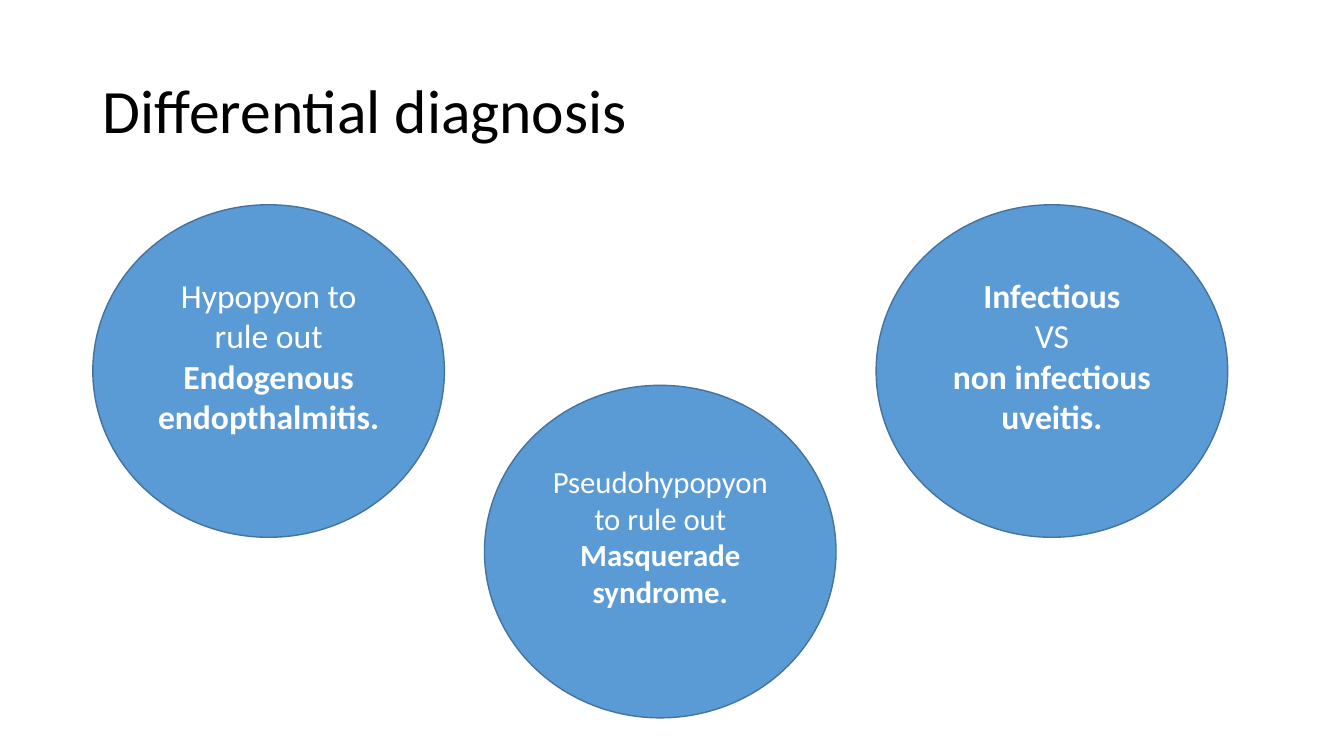
"""Build the differential diagnosis slide."""
from dataclasses import dataclass

from pptx import Presentation
from pptx.dml.color import RGBColor
from pptx.enum.shapes import MSO_SHAPE
from pptx.enum.text import MSO_ANCHOR, PP_ALIGN
from pptx.util import Cm, Pt

OVAL = MSO_SHAPE.OVAL
MIDDLE = MSO_ANCHOR.MIDDLE
LEFT, CENTER = PP_ALIGN.LEFT, PP_ALIGN.CENTER


@dataclass(frozen=True)
class Theme:
    """Colours, font and type sizes of the slide."""
    font: str = "Calibri"
    ink: RGBColor = RGBColor(0x00, 0x00, 0x00)
    light: RGBColor = RGBColor(0xFF, 0xFF, 0xFF)
    circle: RGBColor = RGBColor(0x5B, 0x9B, 0xD5)
    outline: RGBColor = RGBColor(0x43, 0x73, 0x9E)
    title_size: int = 44
    body_size: int = 24
    compact_size: int = 22


THEME = Theme()
MARGIN = 2.34
CIRCLE_TOP, CIRCLE_WIDTH, CIRCLE_HEIGHT = 5.16, 8.86, 8.38
CIRCLE_STEP, CIRCLE_DROP = 9.87, 4.55
TEXT_LIFT = 0.9

DIAGNOSES = [
    ([[("Hypopyon to rule out ", False), ("Endogenous endopthalmitis.", True)]],
     THEME.body_size),
    ([[("Pseudohypopyon to rule out ", False), ("Masquerade syndrome.", True)]],
     THEME.compact_size),
    ([[("Infectious", True)], [("VS", False)], [("non infectious uveitis.", True)]],
     THEME.body_size),
]


def write_text(frame, paragraphs, *, size, color, align=LEFT, line_spacing=1.0):
    """Fill a text frame with paragraphs of (text, bold) runs."""
    frame.word_wrap = True
    frame.vertical_anchor = MIDDLE
    for index, runs in enumerate(paragraphs):
        paragraph = frame.add_paragraph() if index else frame.paragraphs[0]
        paragraph.alignment = align
        paragraph.line_spacing = line_spacing
        for text, bold in runs:
            run = paragraph.add_run()
            run.text = text
            run.font.name = THEME.font
            run.font.size = Pt(size)
            run.font.bold = bold
            run.font.color.rgb = color


def add_title(slide, title):
    """Add the slide heading."""
    heading = slide.shapes.add_textbox(Cm(MARGIN), Cm(1.02), Cm(29.21), Cm(3.68))
    write_text(heading.text_frame, [[(title, False)]], size=THEME.title_size,
               color=THEME.ink, line_spacing=0.9)


def add_diagnosis(slide, left, top, paragraphs, size):
    """Add one diagnosis circle with its text set slightly above centre."""
    circle = slide.shapes.add_shape(OVAL, Cm(left), Cm(top),
                                    Cm(CIRCLE_WIDTH), Cm(CIRCLE_HEIGHT))
    circle.shadow.inherit = False
    circle.fill.solid()
    circle.fill.fore_color.rgb = THEME.circle
    circle.line.color.rgb = THEME.outline
    circle.line.width = Pt(1)
    circle.text_frame.margin_bottom = Cm(TEXT_LIFT)
    write_text(circle.text_frame, paragraphs, size=size, color=THEME.light, align=CENTER)


def main():
    """Build and save the presentation."""
    deck = Presentation()
    deck.slide_width, deck.slide_height = Cm(33.87), Cm(19.05)
    slide = deck.slides.add_slide(deck.slide_layouts[6])
    add_title(slide, "Differential diagnosis")
    for column, (paragraphs, size) in enumerate(DIAGNOSES):
        add_diagnosis(slide, MARGIN + column * CIRCLE_STEP,
                      CIRCLE_TOP + column % 2 * CIRCLE_DROP, paragraphs, size)
    deck.save("out.pptx")


if __name__ == "__main__":
    main()
